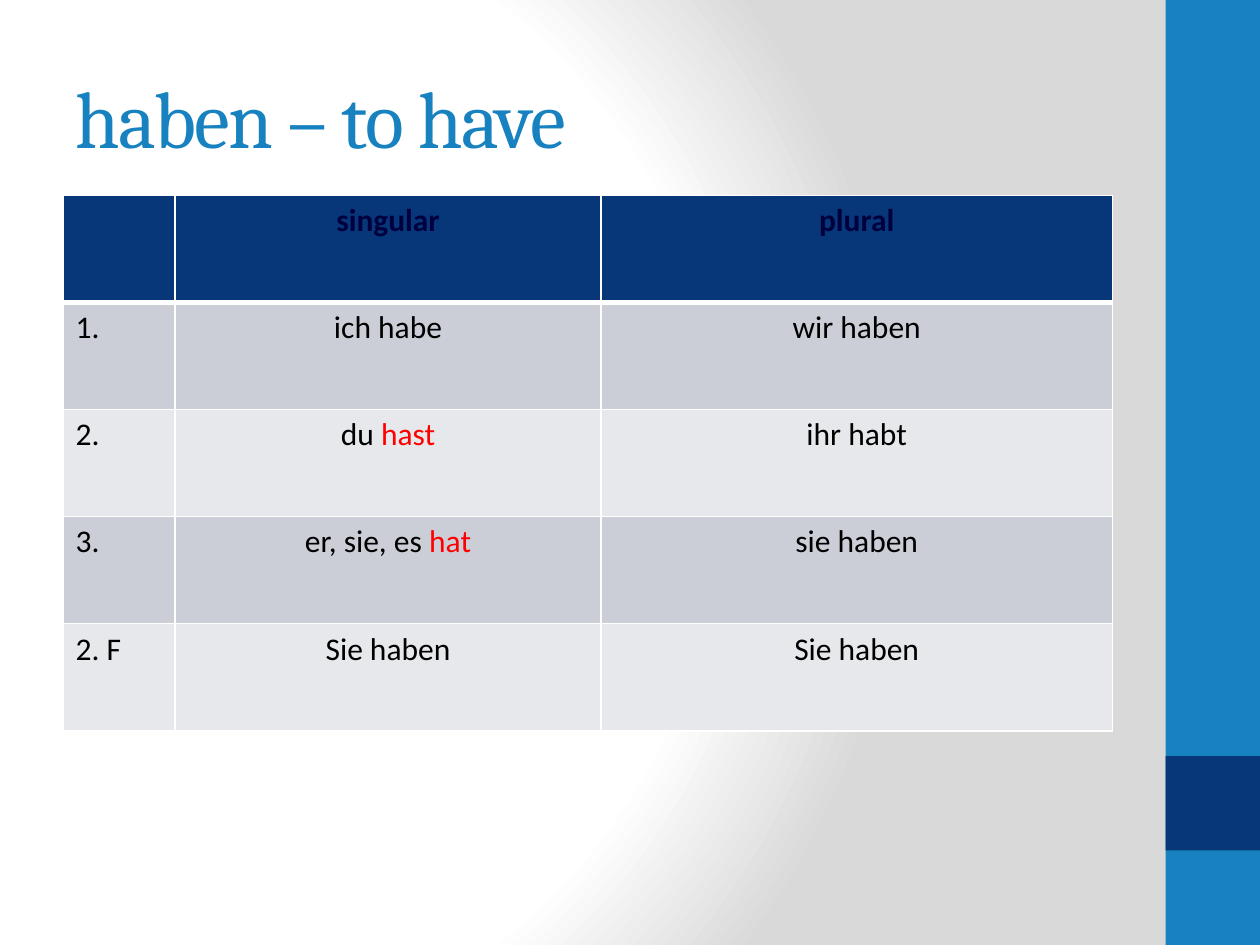
from pptx import Presentation
from pptx.dml.color import RGBColor
from pptx.enum.shapes import MSO_SHAPE
from pptx.enum.text import MSO_ANCHOR, PP_ALIGN
from pptx.oxml import parse_xml
from pptx.oxml.ns import nsdecls
from pptx.util import Inches, Pt

BLUE = RGBColor(0x17, 0x82, 0xBF)
NAVY = RGBColor(0x07, 0x37, 0x79)
INK = RGBColor(0x00, 0x00, 0x3F)
BLACK = RGBColor(0x00, 0x00, 0x00)
RED = RGBColor(0xFF, 0x00, 0x00)
WHITE = RGBColor(0xFF, 0xFF, 0xFF)
GRAY = RGBColor(0xD9, 0xD9, 0xD9)
BANDS = RGBColor(0xCC, 0xCE, 0xD7), RGBColor(0xE7, 0xE8, 0xEC)

WIDE, HIGH = Inches(10), Inches(7.5)
LEFT, SPAN = 0.05, 0.833  # shares of the slide's width
COLS = 0.89, 3.38, 4.06
ROW = 0.85

# Each cell is a list of runs; a run after the first is stressed
ROWS = [
    [[], ["singular"], ["plural"]],
    [["1."], ["ich habe"], ["wir haben"]],
    [["2."], ["du ", "hast"], ["ihr habt"]],
    [["3."], ["er, sie, es ", "hat"], ["sie haben"]],
    [["2. F"], ["Sie haben"], ["Sie haben"]],
]


def add_glow(slide):
    """Fill the background with a round white-to-gray gradient."""
    stops = "".join(
        f'<a:gs pos="{pos}000"><a:srgbClr val="{tone}"/></a:gs>'
        for pos, tone in ((0, WHITE), (75, WHITE), (100, GRAY)))
    slide.element.cSld.insert(0, parse_xml(
        f'<p:bg {nsdecls("p", "a")}><p:bgPr><a:gradFill rotWithShape="1">'
        f'<a:gsLst>{stops}</a:gsLst><a:path path="circle">'
        '<a:fillToRect l="20000" t="50000" r="100000" b="50000"/></a:path>'
        '</a:gradFill><a:effectLst/></p:bgPr></p:bg>'))


def add_bar(slide, top, height, color):
    """Add a block to the right-hand strip, in shares of the height."""
    bar = slide.shapes.add_shape(
        MSO_SHAPE.RECTANGLE, int(WIDE * 0.925), int(HIGH * top),
        int(WIDE * 0.075), int(HIGH * height))
    bar.shadow.inherit = False
    bar.fill.solid()
    bar.fill.fore_color.rgb = color
    bar.line.fill.background()


def style(run, face, size, color, bold=False):
    run.font.name = face
    run.font.size = Pt(size)
    run.font.color.rgb = color
    run.font.bold = bold


def set_title(slide, text):
    title = slide.shapes.title
    title.left, title.top = int(WIDE * LEFT), int(HIGH * 0.04)
    title.width, title.height = int(WIDE * SPAN), Inches(1.25)
    frame = title.text_frame
    frame.text = text
    frame.vertical_anchor = MSO_ANCHOR.MIDDLE
    frame.paragraphs[0].alignment = PP_ALIGN.LEFT
    run = frame.paragraphs[0].runs[0]
    style(run, "Cambria", 46, BLUE)
    run.font._element.set("spc", "-100")


def add_edges(cell, head, below):
    """Draw white cell borders, thick under the header row."""
    props = cell._tc.get_or_add_tcPr()
    widths = {"L": 1, "R": 1, "T": 3 if below else 1, "B": 3 if head else 1}
    for place, (side, width) in enumerate(widths.items()):
        props.insert(place, parse_xml(
            f'<a:ln{side} {nsdecls("a")} w="{Pt(width)}"><a:solidFill>'
            f'<a:srgbClr val="{WHITE}"/></a:solidFill></a:ln{side}>'))


def fill_cell(cell, words, row, col):
    head = row == 0
    cell.fill.solid()
    cell.fill.fore_color.rgb = NAVY if head else BANDS[(row - 1) % 2]
    add_edges(cell, head, row == 1)
    para = cell.text_frame.paragraphs[0]
    para.alignment = PP_ALIGN.CENTER if col else PP_ALIGN.LEFT
    for part, word in enumerate(words):
        run = para.add_run()
        run.text = word
        color = RED if part else INK if head else BLACK
        style(run, "Calibri", 18, color, head)


def add_grid(slide):
    table = slide.shapes.add_table(
        len(ROWS), len(COLS), int(WIDE * LEFT), Inches(1.55),
        int(WIDE * SPAN), Inches(ROW * len(ROWS))).table
    for col, width in enumerate(COLS):
        table.columns[col].width = Inches(width)
    for row, cells in enumerate(ROWS):
        table.rows[row].height = Inches(ROW)
        for col, words in enumerate(cells):
            fill_cell(table.cell(row, col), words, row, col)


def main():
    deck = Presentation()
    deck.slide_width, deck.slide_height = WIDE, HIGH
    slide = deck.slides.add_slide(deck.slide_layouts[5])
    # Backdrop
    add_glow(slide)
    add_bar(slide, 0, 1, BLUE)
    add_bar(slide, 0.8, 0.1, NAVY)
    # Content
    set_title(slide, "haben – to have")
    add_grid(slide)
    deck.save("out.pptx")


if __name__ == "__main__":
    main()
